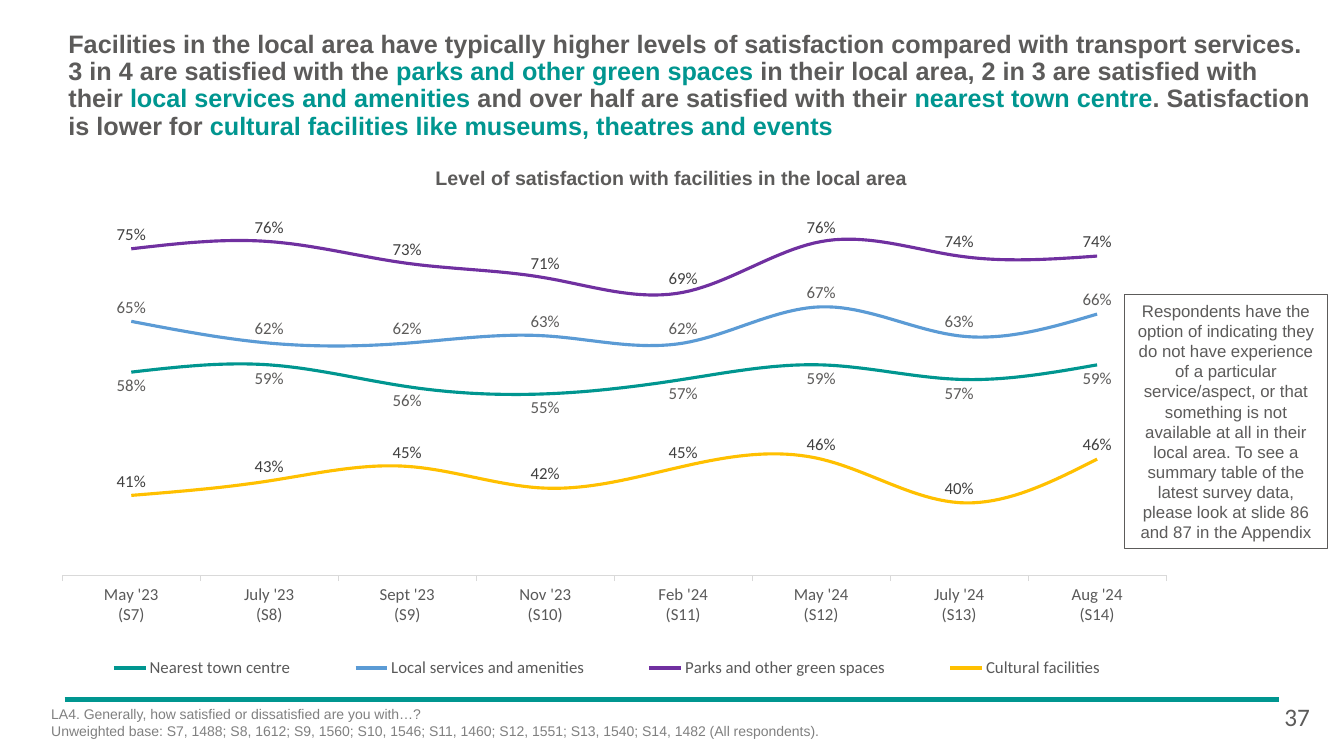
from lxml import etree
from pptx import Presentation
from pptx.chart.data import CategoryChartData
from pptx.dml.color import RGBColor
from pptx.enum.chart import XL_CHART_TYPE as Chart
from pptx.enum.chart import XL_LABEL_POSITION as Spot
from pptx.enum.chart import XL_LEGEND_POSITION as Side
from pptx.enum.chart import XL_MARKER_STYLE as Mark
from pptx.enum.chart import XL_TICK_LABEL_POSITION as Label
from pptx.enum.chart import XL_TICK_MARK as Tick
from pptx.enum.shapes import MSO_CONNECTOR as Link
from pptx.enum.shapes import MSO_SHAPE as Shape
from pptx.enum.text import MSO_ANCHOR as Anchor
from pptx.enum.text import PP_ALIGN as Align
from pptx.oxml.ns import qn
from pptx.util import Inches, Pt

TEAL = RGBColor(0x00, 0x96, 0x90)
BLUE = RGBColor(0x5B, 0x9B, 0xD5)
PURPLE = RGBColor(0x70, 0x30, 0xA0)
GOLD = RGBColor(0xFF, 0xC0, 0x00)
GREY = RGBColor(0x5C, 0x5B, 0x5A)
AXIS = RGBColor(0x59, 0x59, 0x59)
DARK = RGBColor(0x40, 0x40, 0x40)
MID = RGBColor(0x80, 0x80, 0x80)
PALE = RGBColor(0xD9, 0xD9, 0xD9)
BLACK = RGBColor(0, 0, 0)

TITLE = [
    ("Facilities in the local area have typically higher levels of satisfaction "
     "compared with transport services. 3 in 4 are satisfied with the ", GREY),
    ("parks and other green spaces ", TEAL),
    ("in their local area, 2 in 3 are satisfied with their ", GREY),
    ("local services and amenities ", TEAL),
    ("and over half are satisfied with their ", GREY),
    ("nearest town centre", TEAL),
    (". Satisfaction is lower for ", GREY),
    ("cultural facilities like museums, theatres and events", TEAL),
]
NOTE = (
    "Respondents have the option of indicating they do not have experience of a "
    "particular service/aspect, or that something is not available at all in their "
    "local area. To see a summary table of the latest survey data, please look at "
    "slide 86 and 87 in the Appendix"
)
SOURCE = [
    "LA4. Generally, how satisfied or dissatisfied are you with…?",
    "Unweighted base: S7, 1488; S8, 1612; S9, 1560; S10, 1546; S11, 1460; "
    "S12, 1551; S13, 1540; S14, 1482 (All respondents).",
]
MONTHS = ["May '23", "July '23", "Sept '23", "Nov '23",
          "Feb '24", "May '24", "July '24", "Aug '24"]
WAVES = [f"{month}\n(S{wave})" for wave, month in enumerate(MONTHS, 7)]
# name, percentages, line colour, label colour, label position
SERIES = [
    ("Nearest town centre", (58, 59, 56, 55, 57, 59, 57, 59), TEAL, GREY, Spot.BELOW),
    ("Local services and amenities", (65, 62, 62, 63, 62, 67, 63, 66),
     BLUE, GREY, Spot.ABOVE),
    ("Parks and other green spaces", (75, 76, 73, 71, 69, 76, 74, 74),
     PURPLE, DARK, Spot.ABOVE),
    ("Cultural facilities", (41, 43, 45, 42, 45, 46, 40, 46), GOLD, DARK, Spot.ABOVE),
]


def style(font, size, color, name="Calibri"):
    font.size, font.name, font.color.rgb = Pt(size), name, color


def layout(parent, index, box, inner=False):
    """Fix a chart part at box, given as fractions of the chart."""
    for old in parent.findall(qn("c:layout")):
        parent.remove(old)
    node = etree.Element(qn("c:layout"))
    manual = etree.SubElement(node, qn("c:manualLayout"))
    pairs = [("layoutTarget", "inner")] if inner else []
    pairs += [("xMode", "edge"), ("yMode", "edge"), *zip("xywh", box)]
    for tag, value in pairs:
        etree.SubElement(manual, qn("c:" + tag)).set("val", str(value))
    parent.insert(index, node)


class Page:
    sans = "Arial"

    def __init__(self, deck):
        self.shapes = deck.slides.add_slide(deck.slide_layouts[6]).shapes

    def rule(self, left, right, top):
        line = self.shapes.add_connector(
            Link.STRAIGHT, Inches(left), Inches(top), Inches(right), Inches(top))
        line.line.color.rgb, line.line.width = TEAL, Pt(3)
        etree.SubElement(line._element.spPr, qn("a:effectLst"))

    def fill(self, frame, texts, size, color, name=None, align=Align.LEFT, bold=False):
        frame.word_wrap = True
        for i, text in enumerate(texts):
            para = frame.add_paragraph() if i else frame.paragraphs[0]
            para.text, para.alignment = text, align
            style(para.font, size, color, name or self.sans)
            para.font.bold = bold

    def text(self, box, texts, size, color, **look):
        frame = self.shapes.add_textbox(*map(Inches, box)).text_frame
        self.fill(frame, texts, size, color, **look)
        return frame

    def title(self, box, parts):
        frame = self.text(box, [""], 18, GREY, bold=True)
        frame.vertical_anchor = Anchor.MIDDLE
        para = frame.paragraphs[0]
        para.line_spacing = 0.9
        for words, color in parts:
            run = para.add_run()
            run.text, run.font.color.rgb = words, color

    def note(self, box, text):
        shape = self.shapes.add_shape(Shape.RECTANGLE, *map(Inches, box))
        shape.shadow.inherit = False
        shape.fill.background()
        shape.line.color.rgb, shape.line.width = GREY, Pt(0.75)
        self.fill(shape.text_frame, [text], 12, GREY, align=Align.CENTER)

    def chart(self, box):
        data = CategoryChartData(number_format="0%")
        data.categories = WAVES
        for name, shares, *_ in SERIES:
            data.add_series(name, [share / 100 for share in shares])
        chart = self.shapes.add_chart(Chart.LINE, *map(Inches, box), data).chart
        style(chart.font, 10, BLACK)
        chart.has_title = False

        cat, val = chart.category_axis, chart.value_axis
        cat.major_tick_mark = Tick.OUTSIDE
        cat.tick_label_position = Label.LOW
        cat.format.line.color.rgb, cat.format.line.width = PALE, Pt(0.75)
        style(cat.tick_labels.font, 12, AXIS)
        val.minimum_scale, val.maximum_scale = 0.3, 0.8
        val.has_major_gridlines = val.visible = False

        plot = chart.plots[0]
        plot.vary_by_categories = False
        for line, (_, _, color, ink, spot) in zip(plot.series, SERIES):
            line.smooth = True
            line.marker.style = Mark.NONE
            line.format.line.color.rgb, line.format.line.width = color, Pt(2.25)
            tags = line.data_labels
            tags.show_value, tags.position = True, spot
            tags.number_format, tags.number_format_is_linked = "0%", False
            style(tags.font, 12, ink)

        chart.has_legend = True
        key = chart.legend
        key.position, key.include_in_layout = Side.BOTTOM, False
        style(key.font, 12, AXIS)
        layout(key._element, 1, (0, 0.89, 0.99, 0.09))
        area = chart._chartSpace.chart.plotArea
        layout(area, 0, (0.007, 0.026, 0.989, 0.724), inner=True)


def main():
    deck = Presentation()
    deck.slide_width, deck.slide_height = Inches(13.33), Inches(7.5)
    page = Page(deck)
    page.rule(0.64, 12.69, 6.94)
    page.title((0.58, 0.42, 12.58, 0.87), TITLE)
    head = page.text((1.82, 1.65, 9.68, 0.24),
                     ["Level of satisfaction with facilities in the local area"],
                     14, GREY, align=Align.CENTER, bold=True)
    head.margin_left = head.margin_right = head.margin_top = head.margin_bottom = 0
    page.chart((0.54, 1.98, 11.07, 4.97))
    page.text((0.41, 6.95, 11.98, 0.56), SOURCE, 10, MID)
    page.text((12.64, 6.91, 0.53, 0.4), ["37"], 18, GREY, name="Calibri")
    page.note((11.15, 2.92, 2.02, 2.52), NOTE)
    deck.save("out.pptx")


if __name__ == "__main__":
    main()
